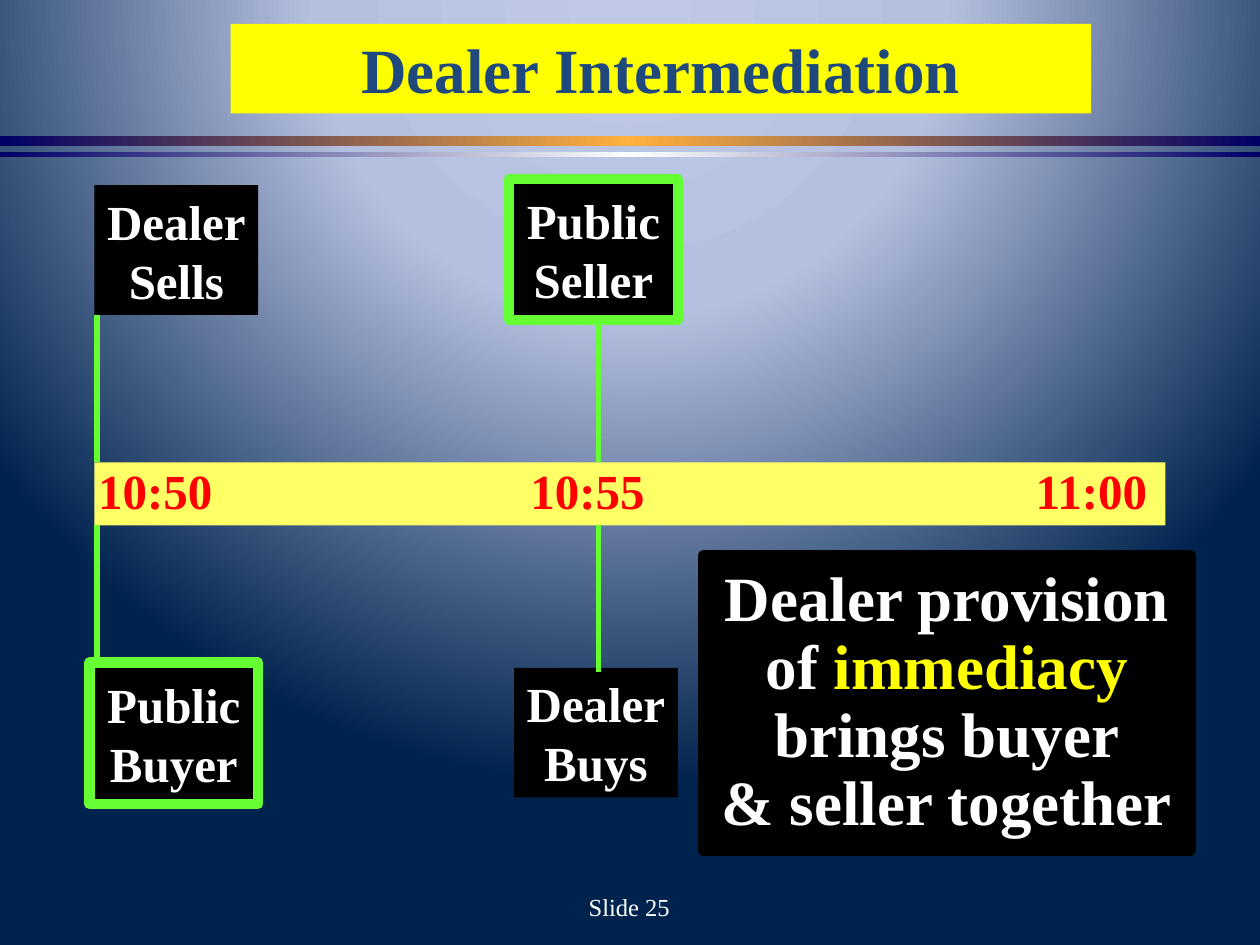
from dataclasses import dataclass

from lxml.etree import SubElement
from pptx import Presentation
from pptx.dml.color import RGBColor
from pptx.enum.shapes import MSO_CONNECTOR, MSO_SHAPE
from pptx.enum.text import MSO_ANCHOR, PP_ALIGN
from pptx.oxml import parse_xml
from pptx.oxml.ns import nsdecls, qn
from pptx.util import Inches, Pt


@dataclass(frozen=True)
class Theme:
    font: str = "Times New Roman"
    white: str = "FFFFFF"
    black: str = "000000"
    yellow: str = "FFFF00"
    timeline: str = "FFFF66"
    time: str = "FF0000"
    green: str = "66FF33"
    title: str = "1F497D"
    background: tuple = ((0, "BFC9E5"), (40, "B5C0E0"), (100, "00234D"))
    gold_rule: tuple = ((0, "000066"), (50, "FFB03D"), (100, "000066"))
    white_rule: tuple = ((0, "000066"), (50, "FFFFFF"), (100, "000066"))
    heading_size: int = 36
    label_size: int = 28
    footer_size: int = 14
    border_width: int = 6
    line_width: int = 3


LINEAR = '<a:lin ang="0" scaled="0"/>'
CIRCLE = ('<a:path path="circle">'
          '<a:fillToRect l="50000" t="-80000" r="50000" b="180000"/></a:path>')


def set_gradient(properties, stops, direction):
    """Replace the solid fill inside a properties element by a gradient."""
    stop_xml = "".join(
        f'<a:gs pos="{position * 1000}"><a:srgbClr val="{color}"/></a:gs>'
        for position, color in stops)
    gradient = parse_xml(
        f'<a:gradFill {nsdecls("a")} rotWithShape="1">'
        f'<a:gsLst>{stop_xml}</a:gsLst>{direction}</a:gradFill>')
    properties.replace(properties.find(qn("a:solidFill")), gradient)


def write_text(shape, lines, *, font, size, color, bold=True, align=PP_ALIGN.CENTER,
               anchor=MSO_ANCHOR.MIDDLE, wrap=False, spacing=None, tabs=()):
    """Each line is a string, or a list of (text, color) runs."""
    frame = shape.text_frame
    frame.word_wrap = wrap
    frame.vertical_anchor = anchor
    for index, line in enumerate(lines):
        paragraph = frame.paragraphs[0] if index == 0 else frame.add_paragraph()
        paragraph.alignment = align
        if spacing:
            paragraph.line_spacing = spacing
        if tabs:
            tab_list = SubElement(paragraph._p.get_or_add_pPr(), qn("a:tabLst"))
            for position in tabs:
                SubElement(tab_list, qn("a:tab"), pos=str(Inches(position)), algn="l")
        runs = [(line, color)] if isinstance(line, str) else line
        for text, run_color in runs:
            run = paragraph.add_run()
            run.text = text
            run.font.name = font
            run.font.size = Pt(size)
            run.font.bold = bold
            run.font.color.rgb = RGBColor.from_string(run_color)


class SlideBuilder:
    def __init__(self, slide, theme):
        self.slide = slide
        self.theme = theme

    def background(self, stops):
        self.slide.background.fill.solid()
        set_gradient(self.slide.element.find(f".//{qn('p:bgPr')}"), stops, CIRCLE)

    def box(self, left, top, width, height, fill, border=None):
        shape = self.slide.shapes.add_shape(
            MSO_SHAPE.RECTANGLE, Inches(left), Inches(top), Inches(width), Inches(height))
        shape.shadow.inherit = False
        shape.fill.solid()
        shape.fill.fore_color.rgb = RGBColor.from_string(fill)
        if border:
            shape.line.color.rgb = RGBColor.from_string(border)
            shape.line.width = Pt(self.theme.border_width)
        else:
            shape.line.fill.background()
        return shape

    def rule(self, top, height, stops):
        shape = self.box(0, top, 10, height, self.theme.white)
        set_gradient(shape.element.spPr, stops, LINEAR)

    def text(self, shape, lines, size, color=None, **options):
        write_text(shape, lines, font=self.theme.font, size=size,
                   color=color or self.theme.white, **options)

    def text_box(self, left, top, width, height, lines, size, margin=0.1, **options):
        shape = self.slide.shapes.add_textbox(
            Inches(left), Inches(top), Inches(width), Inches(height))
        shape.text_frame.margin_left = Inches(margin)
        self.text(shape, lines, size, wrap=True, **options)

    def line(self, x, top, bottom):
        connector = self.slide.shapes.add_connector(
            MSO_CONNECTOR.STRAIGHT, Inches(x), Inches(top), Inches(x), Inches(bottom))
        connector.line.color.rgb = RGBColor.from_string(self.theme.green)
        connector.line.width = Pt(self.theme.line_width)
        SubElement(connector.element.spPr, qn("a:effectLst"))


def main():
    presentation = Presentation()
    presentation.slide_width = Inches(10)
    presentation.slide_height = Inches(7.5)
    theme = Theme()
    builder = SlideBuilder(
        presentation.slides.add_slide(presentation.slide_layouts[6]), theme)

    builder.background(theme.background)
    builder.text_box(3.83, 7, 2.33, 0.4, ["Slide 25"], theme.footer_size, bold=False)

    builder.box(0.75, 3.67, 8.5, 0.5, theme.timeline)
    builder.text_box(0.58, 3.6, 9.83, 0.57, ["10:50\t10:55\t11:00"], theme.label_size,
                     margin=0.2, color=theme.time, align=PP_ALIGN.LEFT, tabs=(3.43, 7.44))

    public_size, dealer_size = (1.34, 1.12), (1.3, 1.03)
    parties = [
        (0.71, 5.26, public_size, theme.green, ["Public", "Buyer"]),
        (4.04, 1.42, public_size, theme.green, ["Public", "Seller"]),
        (4.08, 5.3, dealer_size, None, ["Dealer", "Buys"]),
        (0.75, 1.47, dealer_size, None, ["Dealer", "Sells"]),
    ]
    for left, top, size, border, lines in parties:
        shape = builder.box(left, top, *size, theme.black, border)
        builder.text(shape, lines, theme.label_size)

    for x, bottom in ((0.77, 5.26), (4.75, 5.33)):
        builder.line(x, 2.5, 3.67)
        builder.line(x, 4.17, bottom)

    conclusion = builder.box(5.58, 4.41, 3.87, 2.34, theme.black, theme.black)
    builder.text(conclusion, [
        "Dealer provision",
        [("of ", theme.white), ("immediacy", theme.yellow)],
        "brings buyer",
        "& seller together",
    ], theme.heading_size, spacing=0.9)

    builder.rule(1.08, 0.08, theme.gold_rule)
    builder.rule(1.21, 0.04, theme.white_rule)
    title = builder.box(1.83, 0.19, 6.83, 0.71, theme.yellow)
    builder.text(title, ["Dealer Intermediation"], theme.heading_size, theme.title,
                 anchor=MSO_ANCHOR.TOP, wrap=True)

    presentation.save("out.pptx")


if __name__ == "__main__":
    main()
